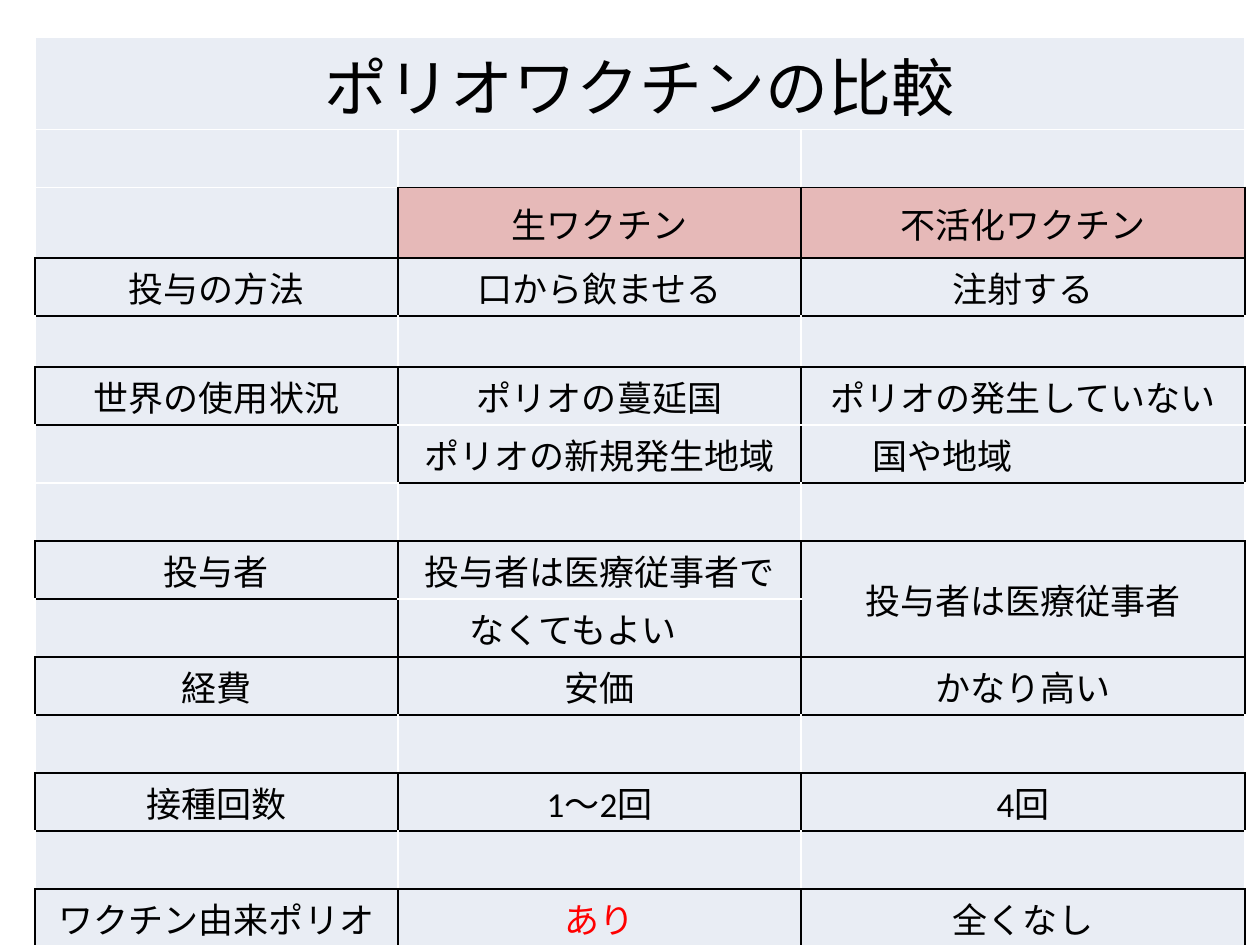
from dataclasses import dataclass
from typing import Any

from lxml import etree
from pptx import Presentation
from pptx import util as u
from pptx.dml import color
from pptx.enum import text
from pptx.oxml import ns

ROWS = [
    ("ポリオワクチンの比較", "", ""),
    ("", "", ""),
    ("", "生ワクチン", "不活化ワクチン"),
    ("投与の方法", "口から飲ませる", "注射する"),
    ("", "", ""),
    ("世界の使用状況", "ポリオの蔓延国", "ポリオの発生していない"),
    ("", "ポリオの新規発生地域", "国や地域"),
    ("", "", ""),
    ("投与者", "投与者は医療従事者で", "投与者は医療従事者"),
    ("", "なくてもよい", ""),
    ("経費", "安価", "かなり高い"),
    ("", "", ""),
    ("接種回数", "1～2回", "4回"),
    ("", "", ""),
    ("ワクチン由来ポリオ", "あり", "全くなし"),
]
WIDTHS = [207.4, 230.4, 253.6]
HEIGHTS = {0: 45.4, 2: 40.3, 4: 23.8}
ROW_HEIGHT = 33.15
MERGES = [((0, 0), (0, 2)), ((8, 2), (9, 2))]
CONTINUED = {(6, 1), (6, 2), (9, 1)}
INDENTED = {(6, 2), (9, 1)}


def rgb(value):
    return color.RGBColor.from_string(value)


def boxed(row, col):
    inside = 2 <= row < len(ROWS) and 0 <= col < len(WIDTHS)
    return inside and (bool(ROWS[row][col]) or (row, col) == (9, 2))


def edge_colors(row, col):
    edges = {}
    for side, dr, dc in (("L", 0, -1), ("R", 0, 1), ("T", -1, 0), ("B", 1, 0)):
        lower = (max(row, row + dr), col)
        joined = dr and lower in CONTINUED
        black = boxed(row, col) or boxed(row + dr, col + dc)
        edges[side] = "000000" if black and not joined else "FFFFFF"
    return edges


@dataclass
class Deck:
    s: Any
    font: str = "Calibri"
    ink: str = "000000"
    size: float = 20
    border: float = 1

    def table(self, left, top, widths, heights):
        frame = self.s.shapes.add_table(
            len(heights), len(widths), u.Pt(left), u.Pt(top),
            u.Pt(sum(widths)), u.Pt(sum(heights)))
        tbl = frame.table
        tbl.first_row = tbl.horz_banding = False
        for column, width in zip(tbl.columns, widths):
            column.width = u.Pt(width)
        for row, height in zip(tbl.rows, heights):
            row.height = u.Pt(height)
        return tbl

    def borders(self, cell, edges):
        tcPr = cell._tc.get_or_add_tcPr()
        for side, value in edges.items():
            ln = etree.SubElement(tcPr, ns.qn(f"a:ln{side}"), w=str(u.Pt(self.border)))
            fill = etree.SubElement(ln, ns.qn("a:solidFill"))
            etree.SubElement(fill, ns.qn("a:srgbClr"), val=value)

    def cell(self, cell, words, fill, edges, size=None, ink=None, indent=None):
        self.borders(cell, edges)
        cell.fill.solid()
        cell.fill.fore_color.rgb = rgb(fill)
        if not words:
            return
        cell.vertical_anchor = text.MSO_ANCHOR.MIDDLE
        cell.margin_left = u.Pt(indent or 0.7)
        cell.margin_right = cell.margin_top = u.Pt(0.7)
        cell.margin_bottom = 0
        p = cell.text_frame.paragraphs[0]
        p.text = words
        p.alignment = text.PP_ALIGN.LEFT if indent else text.PP_ALIGN.CENTER
        r = p.runs[0]
        r.font.name = self.font
        r.font.size = u.Pt(size or self.size)
        r.font.color.rgb = rgb(ink or self.ink)


def main():
    prs = Presentation()
    prs.slide_width, prs.slide_height = u.Pt(720), u.Pt(540)
    deck = Deck(prs.slides.add_slide(prs.slide_layouts[6]))
    heights = [HEIGHTS.get(i, ROW_HEIGHT) for i in range(len(ROWS))]
    tbl = deck.table(20, 21.2, WIDTHS, heights)
    for start, end in MERGES:
        tbl.cell(*start).merge(tbl.cell(*end))
    for row, line in enumerate(ROWS):
        for col, words in enumerate(line):
            deck.cell(
                tbl.cell(row, col), words,
                "E6B9B8" if row == 2 and col else "E9EDF4",
                edge_colors(row, col),
                size=36 if row == 0 else None,
                ink="FF0000" if words == "あり" else None,
                indent=40.7 if (row, col) in INDENTED else None)
    prs.save("out.pptx")


if __name__ == "__main__":
    main()
